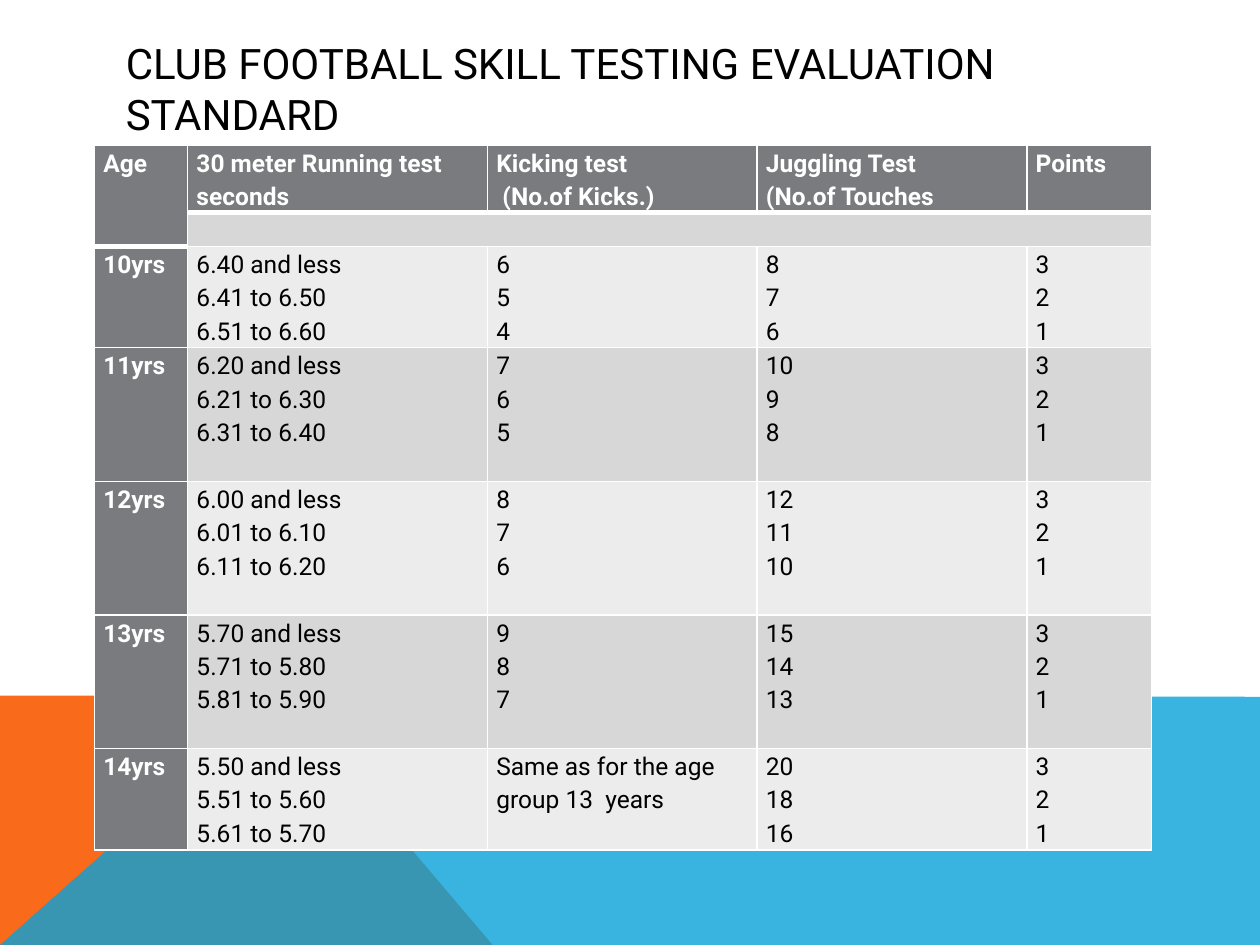
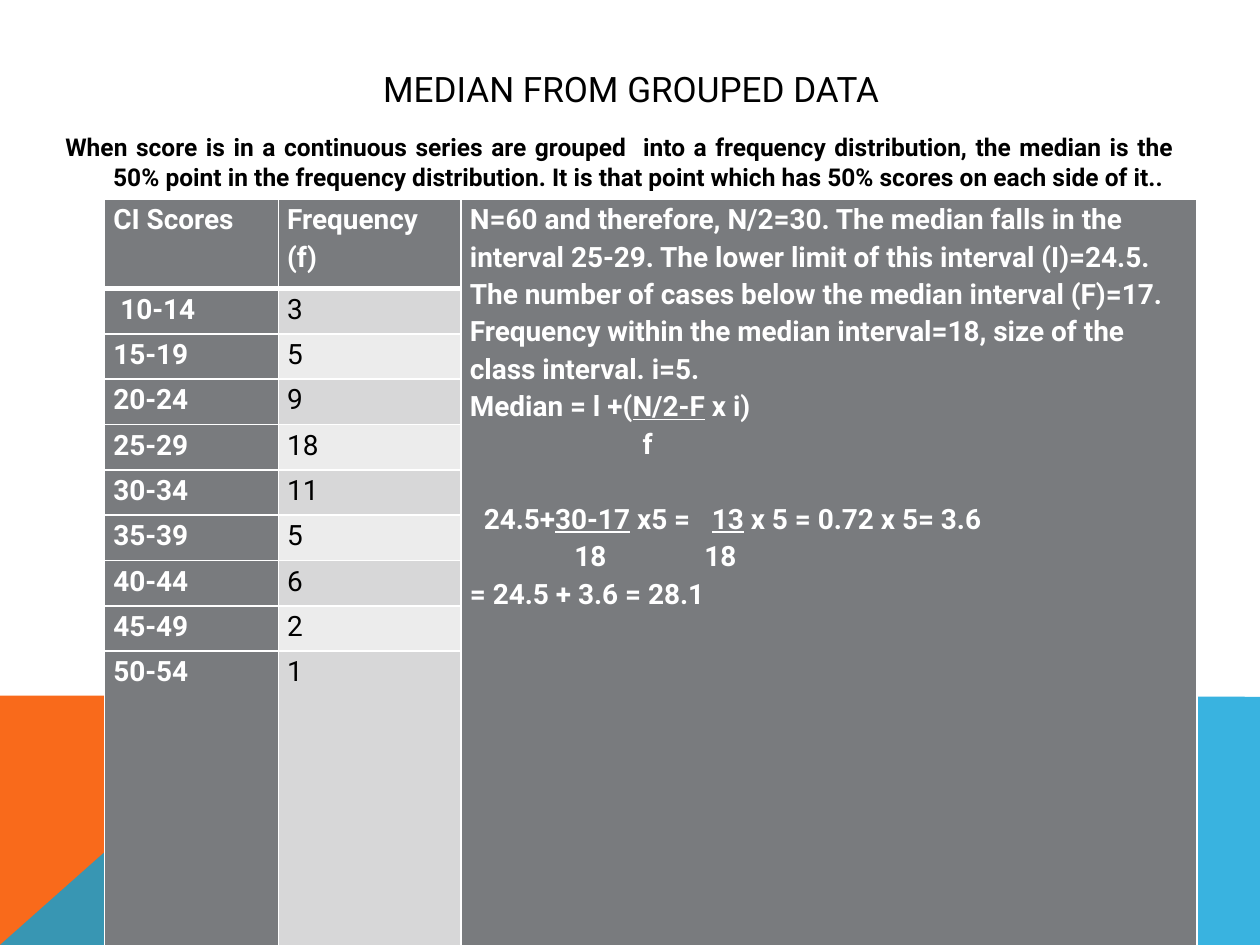
from lxml.etree import SubElement
from pptx import Presentation
from pptx.dml.color import RGBColor
from pptx.enum.text import MSO_ANCHOR, PP_ALIGN
from pptx.oxml.ns import qn
from pptx.util import Inches, Pt

FONT = "Roboto"
BLACK, WHITE = "000000", "FFFFFF"
ORANGE, BLUE = "F96A1B", "08A1D9"
HEADER_GREY, DARK_BAND, LIGHT_BAND = "797B7E", "D7D7D8", "ECECEC"


def paint(fill, color):
    """Fill a shape, cell or font with a hex colour."""
    fill.solid()
    fill.fore_color.rgb = RGBColor.from_string(color)


def write(frame, text, size=14, color=BLACK, bold=False, align=None, line=None):
    """Write one paragraph per line; words between underscores are underlined."""
    frame.word_wrap = True
    for index, row_text in enumerate(text.split("\n")):
        para = frame.add_paragraph() if index else frame.paragraphs[0]
        para.alignment = align
        para.line_spacing = line
        if not row_text:
            SubElement(para._p, qn("a:endParaRPr"), sz=str(size * 100))
            continue
        for part, words in enumerate(row_text.split("_")):
            span = para.add_run()
            span.text = words
            span.font.name = FONT
            span.font.size = Pt(size)
            span.font.bold = bold
            span.font.underline = part % 2 == 1
            paint(span.font.fill, color)


# Skill standards: one row per age group
skill_rows = [
    ["Age", "30 meter Running test\nseconds", "Kicking test\n (No.of Kicks.)",
     "Juggling Test\n(No.of Touches", "Points"],
    [""] * 5,
    ["10yrs", "6.40 and less\n6.41 to 6.50\n6.51 to 6.60", "6\n5\n4", "8\n7\n6"],
    ["11yrs", "6.20 and less\n6.21 to 6.30\n6.31 to 6.40", "7\n6\n5", "10\n9\n8"],
    ["12yrs", "6.00 and less\n6.01 to 6.10\n6.11 to 6.20", "8\n7\n6", "12\n11\n10"],
    ["13yrs", "5.70 and less\n5.71 to 5.80\n5.81 to 5.90", "9\n8\n7", "15\n14\n13"],
    ["14yrs", "5.50 and less\n5.51 to 5.60\n5.61 to 5.70",
     "Same as for the age group 13  years", "20\n18\n16"],
]
for row in skill_rows[2:]:
    row.append("3\n2\n1")

# Grouped scores: class interval and frequency, with the working beside them
median_working = "\n".join([
    "N=60 and therefore, N/2=30. The median falls in the interval 25-29. "
    "The lower limit of this interval (I)=24.5. The number of cases below the "
    "median interval (F)=17. Frequency within the median interval=18, size of "
    "the class interval. i=5.",
    "Median = l +(_N/2-F_ x i)",
    "\tf",
    "\t24.5+_30-17_ x5 =\t_13_ x 5 = 0.72 x 5= 3.6",
    "\t18\t18",
    "= 24.5 + 3.6 = 28.1",
])
median_tabs = {2: [1.37], 3: [0.11, 1.92], 4: [0.83, 1.86]}
intervals = [" 10-14"] + [f"{low}-{low + 4}" for low in range(15, 55, 5)]
frequencies = [3, 5, 9, 18, 11, 5, 6, 2, 1]
score_rows = [["CI Scores", "Frequency\n(f)", median_working]]
score_rows += [[scores, str(count), ""] for scores, count in zip(intervals, frequencies)]

pages = [
    dict(title="CLUB FOOTBALL SKILL TESTING EVALUATION STANDARD", title_size=24,
         align=PP_ALIGN.LEFT, at=(0.75, 1.15), rows=skill_rows, size=14,
         widths=[0.74, 2.38, 2.14, 2.14, 0.99],
         heights=[0.53, 0.26, 0.79, 1.06, 1.06, 1.06, 0.79],
         merges=[(0, 0, 1, 0), (1, 1, 1, 4)], dark_columns=[0]),
    dict(title="MEDIAN FROM GROUPED DATA", title_size=20,
         align=PP_ALIGN.CENTER, at=(0.83, 1.58), rows=score_rows, size=16,
         widths=[1.38, 1.45, 5.84], heights=[0.71] + [0.36] * 8 + [2.35],
         merges=[(0, 2, 9, 2)], dark_columns=[0, 2]),
]
footer_bands = [
    (ORANGE, 100, [(0, 7.5), (0, 5.52), (2.23, 5.52), (3.91, 7.5)]),
    (BLUE, 80, [(0, 7.5), (2.23, 5.52), (10, 5.53), (10, 7.5)]),
]

deck = Presentation()
deck.slide_width, deck.slide_height = Inches(10), Inches(7.5)

for layout in pages:
    page = deck.slides.add_slide(deck.slide_layouts[6])
    paint(page.background.fill, WHITE)

    # Footer bands
    for color, opacity, points in footer_bands:
        corners = [(Inches(x), Inches(y)) for x, y in points]
        builder = page.shapes.build_freeform(*corners[0])
        builder.add_line_segments(corners[1:], close=True)
        band = builder.convert_to_shape()
        band.shadow.inherit = False
        band.line.fill.background()
        paint(band.fill, color)
        if opacity < 100:
            tint = band._element.spPr.find(".//" + qn("a:srgbClr"))
            SubElement(tint, qn("a:alpha"), val=str(opacity * 1000))

    # Title
    title = page.shapes.add_textbox(Inches(0.9), Inches(0.4), Inches(8.22), Inches(0.6))
    title.text_frame.vertical_anchor = MSO_ANCHOR.MIDDLE
    write(title.text_frame, layout["title"], size=layout["title_size"],
          align=layout["align"])

    # Table grid
    rows, widths, heights = layout["rows"], layout["widths"], layout["heights"]
    left, top = layout["at"]
    table = page.shapes.add_table(len(rows), len(widths), Inches(left), Inches(top),
                                  Inches(sum(widths)), Inches(sum(heights))).table
    table.first_row = table.horz_banding = False
    for column, width in zip(table.columns, widths):
        column.width = Inches(width)
    for table_row, height in zip(table.rows, heights):
        table_row.height = Inches(height)

    # Thick rules lie below the header, and below the merged header cells
    thick_below = {(0, c) for c in range(len(widths))}
    for first_row, first_column, last_row, last_column in layout["merges"]:
        table.cell(first_row, first_column).merge(table.cell(last_row, last_column))
        if first_row == 0:
            thick_below.add((last_row, first_column))

    # Cells
    for r, row in enumerate(rows):
        for c, text in enumerate(row):
            cell = table.cell(r, c)
            cell.margin_left = cell.margin_right = Inches(0.07)
            cell.margin_top = cell.margin_bottom = 0
            sides = {"L": 1, "R": 1, "T": 3 if (r - 1, c) in thick_below else 1,
                     "B": 3 if (r, c) in thick_below else 1}
            for side, weight in sides.items():
                rule = SubElement(cell._tc.get_or_add_tcPr(), qn("a:ln" + side),
                                  w=str(Pt(weight)))
                SubElement(SubElement(rule, qn("a:solidFill")), qn("a:srgbClr"), val=WHITE)
            dark = r == 0 or c in layout["dark_columns"]
            paint(cell.fill, HEADER_GREY if dark else DARK_BAND if r % 2 else LIGHT_BAND)
            write(cell.text_frame, text, size=layout["size"], bold=dark,
                  color=WHITE if dark else BLACK, line=1.15)

# Fractions in the working are lined up with tab stops
working = table.cell(0, 2).text_frame.paragraphs
for index, stops in median_tabs.items():
    tab_list = SubElement(working[index]._p.get_or_add_pPr(), qn("a:tabLst"))
    for stop in stops:
        SubElement(tab_list, qn("a:tab"), pos=str(Inches(stop)), algn="l")
working[3].space_before = Pt(21.5)

# Definition of the median, with a hanging indent
box = page.shapes.add_textbox(Inches(0.42), Inches(1), Inches(9), Inches(4.12))
write(box.text_frame,
      "When score is in a continuous series are grouped  into a frequency distribution, "
      "the median is the 50% point in the frequency distribution. It is that point which "
      "has 50% scores on each side of it..", bold=True, align=PP_ALIGN.JUSTIFY)
definition = box.text_frame.paragraphs[0]
definition.space_before = Pt(8)
definition._p.get_or_add_pPr().set("marL", str(Inches(0.38)))
definition._p.get_or_add_pPr().set("indent", str(-Inches(0.38)))

deck.save("out.pptx")
